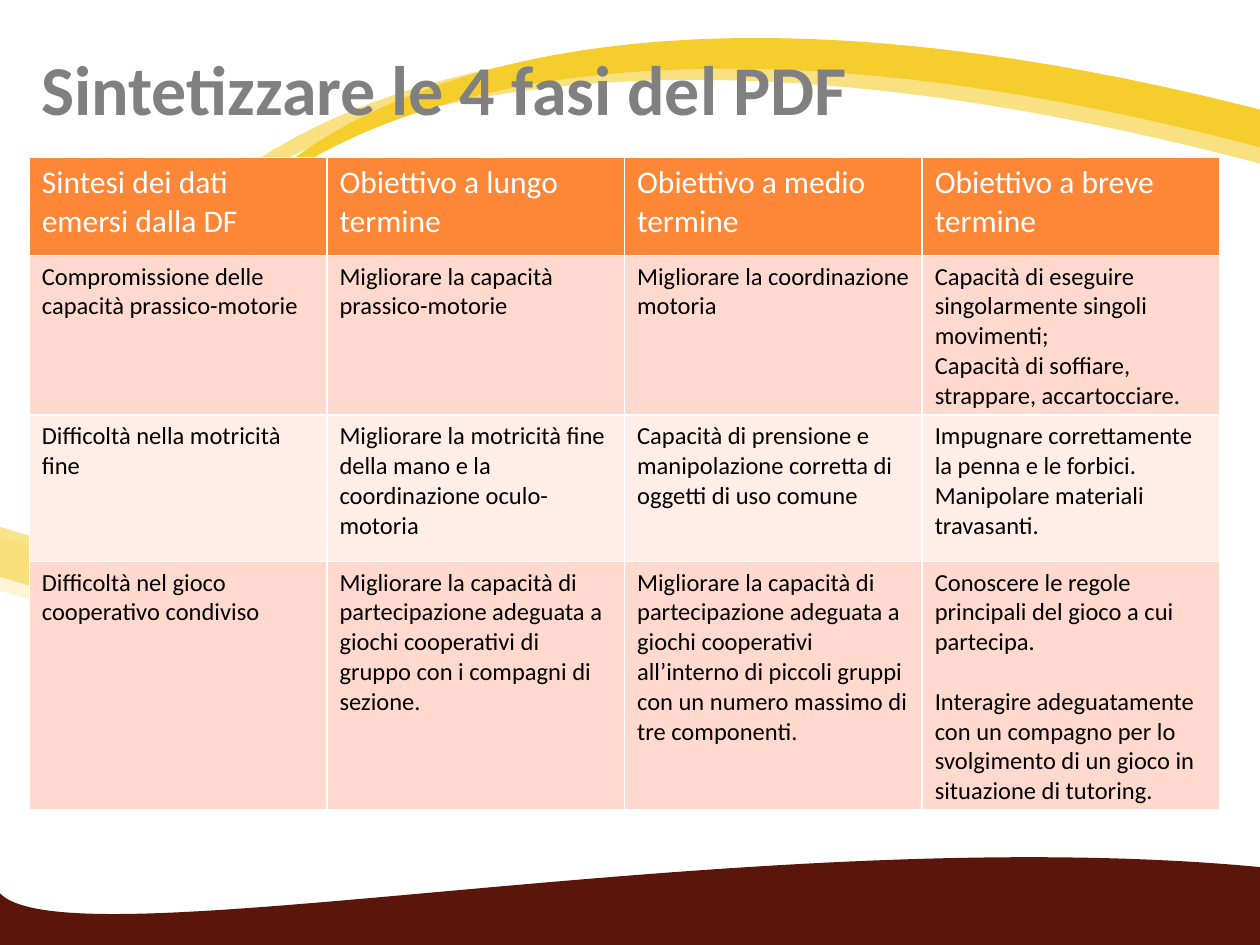
import pptx
import pptx.dml.color
import pptx.enum.text
import pptx.oxml
import pptx.oxml.ns
import pptx.util
from dataclasses import dataclass
from lxml import etree

Cm = pptx.util.Cm
Pt = pptx.util.Pt
Color = pptx.dml.color.RGBColor.from_string
qn = pptx.oxml.ns.qn


@dataclass(frozen=True)
class Theme:
    font: str = "Calibri"
    title_size: int = 40
    header_size: int = 18
    body_size: int = 14
    title: str = "808080"
    header_text: str = "FFFFFF"
    body_text: str = "000000"
    border: str = "FFFFFF"
    header_fill: str = "FE8637"
    odd_row: str = "FFD9CE"
    even_row: str = "FFEDE8"
    footer: str = "5A160B"
    cream: str = "FDF5D5"
    light_yellow: str = "F9E181"
    yellow: str = "F5CD2D"


theme = Theme()


def add_wave(shapes, points, curve_count, color, opacity):
    """Draw an outline whose first curve_count triples of points are cubic curves."""
    outline = [(Cm(x), Cm(y)) for x, y in points]
    builder = shapes.build_freeform(*outline[0])
    builder.add_line_segments(outline[1:], close=True)
    wave = builder.convert_to_shape()
    wave.shadow.inherit = False
    wave.line.fill.background()
    wave.fill.solid()
    wave.fill.fore_color.rgb = Color(color)
    if opacity < 100:
        fill_color = wave._element.spPr.find(".//" + qn("a:srgbClr"))
        etree.SubElement(fill_color, qn("a:alpha")).set("val", str(opacity * 1000))
    lines = list(wave._element.iter(qn("a:lnTo")))
    for first in range(0, curve_count * 3, 3):
        curve = pptx.oxml.parse_xml(f'<a:cubicBezTo {pptx.oxml.ns.nsdecls("a")}/>')
        lines[first].addprevious(curve)
        for line in lines[first:first + 3]:
            curve.append(line[0])
            line.getparent().remove(line)


def add_text(paragraph, text, size, color, bold=False):
    run = paragraph.add_run()
    run.text = text
    run.font.name = theme.font
    run.font.size = Pt(size)
    run.font.bold = bold
    run.font.color.rgb = Color(color)


presentation = pptx.Presentation()
presentation.slide_width = Cm(25.4)
presentation.slide_height = Cm(19.05)
slide = presentation.slides.add_slide(presentation.slide_layouts[5])

# Decorative waves: footer first, then crescents as start, bulge, tip, bulge, end
footer = [(0, 18.01), (1.42, 19.48), (15.14, 16.51), (25.4, 17.48), (25.4, 19.05), (0, 19.05)]
add_wave(slide.shapes, footer, 1, theme.footer, 100)
crescents = [
    ((0, 10.82), (19.38, 16.97), (24.56, 8.46), (19.86, 17.98), (0, 11.91), theme.cream, 100),
    ((25.4, 3.3), (7.85, -1.35), (3.18, 5.08), (7.42, -2.11), (25.4, 2.46),
     theme.light_yellow, 100),
    ((25.4, 2.97), (8.86, -1.4), (4.45, 4.65), (8.46, -2.11), (25.4, 2.21), theme.yellow, 100),
    ((0, 10.62), (18.29, 16.41), (23.14, 8.38), (18.72, 17.35), (0, 11.63), theme.yellow, 54),
]
for start, bulge_1, tip, bulge_2, end, color, opacity in crescents:
    points = [start, bulge_1, tip, tip, tip, bulge_2, end]
    add_wave(slide.shapes, points, 2, color, opacity)

# Title, brought in front of the waves
title = slide.shapes.title
slide.shapes._spTree.append(title._element)
title.left, title.top, title.width, title.height = Cm(0.58), Cm(0.79), Cm(16.94), Cm(1.96)
title.text_frame.word_wrap = False
title.text_frame.auto_size = pptx.enum.text.MSO_AUTO_SIZE.SHAPE_TO_FIT_TEXT
title.text_frame.vertical_anchor = pptx.enum.text.MSO_ANCHOR.TOP
title_paragraph = title.text_frame.paragraphs[0]
title_paragraph.alignment = pptx.enum.text.PP_ALIGN.LEFT
add_text(title_paragraph, "Sintetizzare le 4 fasi del PDF", theme.title_size, theme.title, True)

# Table: a line break in a cell separates paragraphs
rows = [
    ["Sintesi dei dati emersi dalla DF", "Obiettivo a lungo termine",
     "Obiettivo a medio termine", "Obiettivo a breve termine"],
    ["Compromissione delle capacità prassico-motorie",
     "Migliorare la capacità prassico-motorie",
     "Migliorare la coordinazione motoria",
     "Capacità di eseguire singolarmente singoli movimenti;\n"
     "Capacità di soffiare, strappare, accartocciare."],
    ["Difficoltà nella motricità fine",
     "Migliorare la motricità fine della mano e la coordinazione oculo-motoria",
     "Capacità di prensione e manipolazione corretta di oggetti di uso comune",
     "Impugnare correttamente la penna e le forbici.\nManipolare materiali travasanti."],
    ["Difficoltà nel gioco cooperativo condiviso",
     "Migliorare la capacità di partecipazione adeguata a giochi cooperativi di gruppo "
     "con i compagni di sezione.",
     "Migliorare la capacità di partecipazione adeguata a giochi cooperativi all’interno "
     "di piccoli gruppi con un numero massimo di tre componenti.",
     "Conoscere le regole principali del gioco a cui partecipa.\n"
     "Interagire adeguatamente con un compagno per lo svolgimento di un gioco in "
     "situazione di tutoring."],
]
header_height, body_height, column_width = 1.98, 2.95, 6
table = slide.shapes.add_table(len(rows), len(rows[0]), Cm(0.59), Cm(3.17),
                               Cm(column_width * len(rows[0])), Cm(13.13)).table
for column in table.columns:
    column.width = Cm(column_width)

for row_index, texts in enumerate(rows):
    if row_index == 0:
        height, fill = header_height, theme.header_fill
        size, color = theme.header_size, theme.header_text
    else:
        height, fill = body_height, theme.odd_row if row_index % 2 else theme.even_row
        size, color = theme.body_size, theme.body_text
    table.rows[row_index].height = Cm(height)
    for column_index, text in enumerate(texts):
        cell = table.cell(row_index, column_index)
        properties = cell._tc.get_or_add_tcPr()
        for side in "LRTB":
            properties.append(pptx.oxml.parse_xml(
                f'<a:ln{side} {pptx.oxml.ns.nsdecls("a")} w="{Pt(1)}"><a:solidFill>'
                f'<a:srgbClr val="{theme.border}"/></a:solidFill></a:ln{side}>'))
        cell.fill.solid()
        cell.fill.fore_color.rgb = Color(fill)
        for index, line in enumerate(text.split("\n")):
            frame = cell.text_frame
            paragraph = frame.add_paragraph() if index else frame.paragraphs[0]
            add_text(paragraph, line, size, color)

# One line of space between the two goals in the last cell
table.cell(3, 3).text_frame.paragraphs[1].space_before = Pt(17)

presentation.save("out.pptx")
